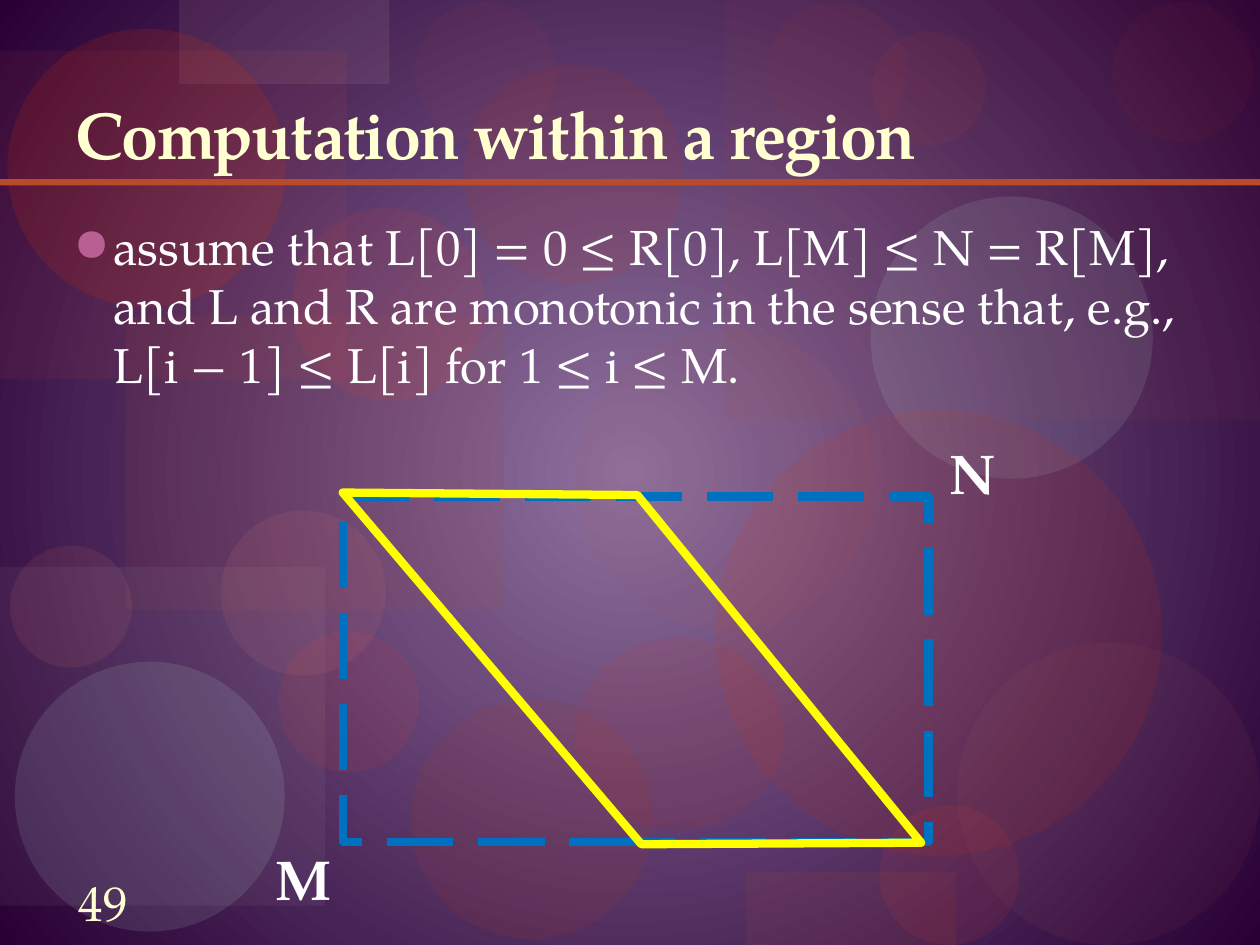
from typing import NamedTuple

from lxml import etree
from pptx import Presentation
from pptx.dml.color import RGBColor
from pptx.enum.dml import MSO_LINE
from pptx.enum.shapes import MSO_SHAPE
from pptx.enum.text import MSO_ANCHOR, MSO_AUTO_SIZE, PP_ALIGN
from pptx.oxml.ns import qn
from pptx.util import Cm, Pt

RECT, OVAL = MSO_SHAPE.RECTANGLE, MSO_SHAPE.OVAL
DASH = MSO_LINE.LONG_DASH
TOP, MIDDLE, BOTTOM = MSO_ANCHOR.TOP, MSO_ANCHOR.MIDDLE, MSO_ANCHOR.BOTTOM
LEFT, CENTER = PP_ALIGN.LEFT, PP_ALIGN.CENTER
FONT = "TeX Gyre Pagella"
CREAM, WHITE, RUST = "FFFFD2", "FFFFFF", "B94B2D"
RED, FLAME, ROSE, CLAY, MINT = "FF4427", "E63100", "ED7E70", "AF5D53", "C1E8E4"


class Box(NamedTuple):
    """Left, top, width and height in centimetres."""
    x: float
    y: float
    w: float
    h: float

    def emu(self) -> list:
        return [Cm(v) for v in self]


class Patch(NamedTuple):
    kind: MSO_SHAPE
    box: Box
    color: str
    alpha: int = 100


class Label(NamedTuple):
    text: str
    box: Box
    size: int
    color: str = WHITE
    bold: bool = False


def disc(x: float, y: float, size: float, color: str, alpha: int) -> Patch:
    return Patch(OVAL, Box(x, y, size, size), color, alpha)


PATCHES = [
    Patch(RECT, Box(2.54, 6.38, 7.62, 5.92), RUST, 9),
    Patch(OVAL, Box(8.28, 14.1, 4.88, 4.83), "AA3826", 13),
    Patch(RECT, Box(14.6, 0, 10.8, 8.46), RUST, 6),
    Patch(RECT, Box(0, 11.43, 6.55, 6.83), "B1ACB4", 8),
    disc(11.61, 6.63, 6.05, CLAY, 8),
    disc(17.73, 16.23, 2.82, RED, 9),
    disc(17.55, 3.96, 5.69, MINT, 11),
    disc(0.3, 13.34, 5.44, MINT, 12),
    disc(5.61, 12.73, 2.84, RED, 9),
    Patch(OVAL, Box(11.58, 12.85, 4.22, 3.89), FLAME, 8),
    Patch(RECT, Box(0, 1.02, 6.99, 6.63), "F04F36", 7),
    Patch(RECT, Box(3.61, 0, 4.24, 1.7), "D9B2AD", 10),
    disc(0.15, 0.58, 5.61, FLAME, 15),
    disc(0.2, 11, 2.46, ROSE, 10),
    disc(5.89, 4.19, 3.89, RED, 9),
    disc(9.35, 1.3, 4.42, FLAME, 8),
    disc(14.43, 8.26, 8.99, FLAME, 10),
    disc(15.44, 0.03, 2.84, RED, 4),
    disc(19.3, 12.95, 6.1, CLAY, 8),
    disc(4.45, 10.29, 3.33, ROSE, 10),
    disc(17.58, 0.64, 2.29, RED, 6),
    disc(22.43, 0.03, 2.84, RED, 4),
    Patch(RECT, Box(15.04, 17.58, 4.24, 1.47), RUST, 10),
    disc(8.36, 0.03, 2.84, RED, 4),
    Patch(RECT, Box(0, 3.61, 25.4, 0.13), RUST),
]

TITLE = Label("Computation within a region", Box(1.27, 0.43, 22.86, 3.18), 38, CREAM, True)
BODY = Label(
    "assume that L[0] = 0 ≤ R[0], L[M] ≤ N = R[M], and L and R are monotonic "
    "in the sense that, e.g., L[i − 1] ≤ L[i] for 1 ≤ i ≤ M.",
    Box(1.27, 4.24, 22.86, 12.7), 28)
CORNERS = [
    Label("M", Box(5.31, 16.89, 1.19, 1.63), 32, bold=True),
    Label("N", Box(18.9, 8.71, 1.4, 1.63), 32, bold=True),
]
NUMBER = Label("49", Box(0.43, 17.55, 3.3, 1.27), 28, CREAM)
GRID = Box(6.91, 10.01, 11.81, 6.96)
BAND = [(6.91, 9.93), (12.85, 9.98), (18.57, 16.99), (12.93, 17.02)]


def rgb(code: str) -> RGBColor:
    return RGBColor.from_string(code)


def node(parent, tag: str, **attrs: str):
    return etree.SubElement(parent, qn(tag), attrs)


def paint_back(slide) -> None:
    """Fill the background with a glow from the centre."""
    fill = slide.background.fill
    fill.gradient()
    for stop, code in zip(fill.gradient_stops, ("8E709E", "280034")):
        stop.color.rgb = rgb(code)
    grad = slide.background._cSld.find(".//" + qn("a:gradFill"))
    grad.remove(grad.find(qn("a:lin")))
    glow = node(grad, "a:path", path="circle")
    node(glow, "a:fillToRect", l="50000", t="50000", r="50000", b="50000")


def draw_patch(shapes, patch: Patch) -> None:
    shape = shapes.add_shape(patch.kind, *patch.box.emu())
    shape.shadow.inherit = False
    shape.line.fill.background()
    shape.fill.solid()
    shape.fill.fore_color.rgb = rgb(patch.color)
    if patch.alpha < 100:
        color = shape.fill._xPr.find(".//" + qn("a:srgbClr"))
        node(color, "a:alpha", val=str(patch.alpha * 1000))


def write(shape, label: Label, anchor=TOP, align=LEFT):
    """Place and format the shape's one paragraph, and return it."""
    shape.left, shape.top, shape.width, shape.height = label.box.emu()
    frame = shape.text_frame
    frame.text = label.text
    frame.word_wrap = True
    frame.auto_size = MSO_AUTO_SIZE.NONE
    frame.vertical_anchor = anchor
    para = frame.paragraphs[0]
    para.alignment = align
    font = para.font
    font.name, font.size, font.bold = FONT, Pt(label.size), label.bold
    font.color.rgb = rgb(label.color)
    return para


def add_bullet(para) -> None:
    para.space_before = Pt(7)
    props = para._p.get_or_add_pPr()
    props.set("marL", str(Cm(0.76)))
    props.set("indent", str(Cm(-0.76)))
    marks = etree.Element("marks")
    node(node(marks, "a:buClr"), "a:srgbClr", val="B95F91")
    node(marks, "a:buSzPct", val="85000")
    node(marks, "a:buFont", typeface=FONT)
    node(marks, "a:buChar", char="●")
    font = props.find(qn("a:defRPr"))
    for mark in list(marks):
        font.addprevious(mark)


def outline(shape, color: str) -> None:
    shape.shadow.inherit = False
    shape.fill.background()
    shape.line.color.rgb = rgb(color)
    shape.line.width = Pt(4.72)


def draw_region(shapes) -> None:
    """Draw the dashed grid and the band inside it as one group."""
    group = shapes.add_group_shape().shapes
    grid = group.add_shape(RECT, *GRID.emu())
    outline(grid, "0070C0")
    grid.line.dash_style = DASH
    start, *rest = [(Cm(x), Cm(y)) for x, y in BAND]
    path = group.build_freeform(*start)
    path.add_line_segments(rest, close=True)
    band = path.convert_to_shape()
    outline(band, "FFFF00")
    node(band.line._get_or_add_ln(), "a:round")


def main() -> None:
    deck = Presentation()
    deck.slide_width, deck.slide_height = Cm(25.4), Cm(19.05)
    slide = deck.slides.add_slide(deck.slide_layouts[1])
    shapes = slide.shapes
    title, body = slide.placeholders
    paint_back(slide)
    for patch in PATCHES:
        draw_patch(shapes, patch)
    for holder in (title, body):
        shapes._spTree.append(holder._element)

    head = write(title, TITLE, BOTTOM)
    head.runs[0]._r.get_or_add_rPr().set("spc", "-100")
    add_bullet(write(body, BODY))
    for label in CORNERS:
        write(shapes.add_textbox(*label.box.emu()), label)
    page = shapes.add_textbox(*NUMBER.box.emu())
    write(page, NUMBER, MIDDLE, CENTER)
    frame = page.text_frame
    frame.margin_left = frame.margin_right = frame.margin_top = frame.margin_bottom = 0
    draw_region(shapes)
    deck.save("out.pptx")


if __name__ == "__main__":
    main()
